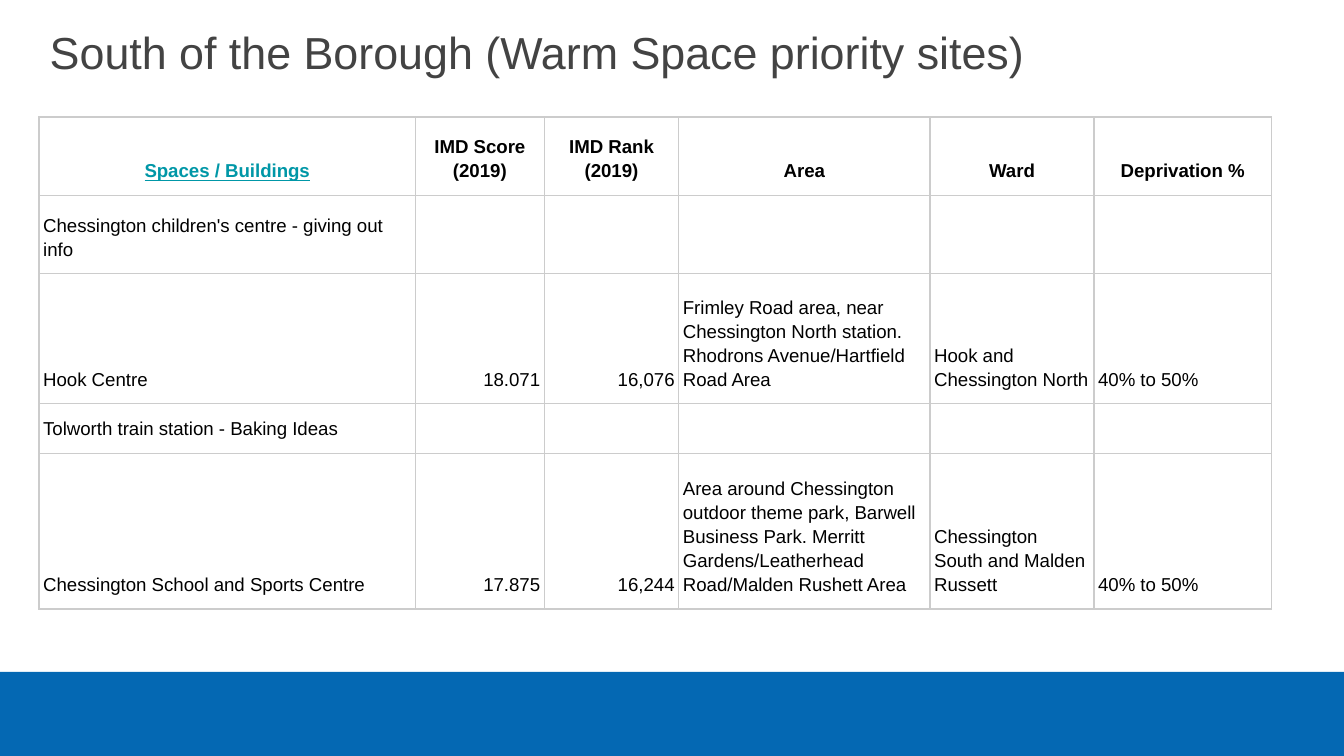
from typing import NamedTuple

from lxml import etree
from pptx import Presentation
from pptx.dml.color import RGBColor
from pptx.enum.shapes import MSO_SHAPE
from pptx.enum.text import MSO_ANCHOR, PP_ALIGN
from pptx.oxml.ns import qn
from pptx.util import Inches, Pt

LEFT, MID, RIGHT = PP_ALIGN.LEFT, PP_ALIGN.CENTER, PP_ALIGN.RIGHT
MIDDLE, BOTTOM = MSO_ANCHOR.MIDDLE, MSO_ANCHOR.BOTTOM
RECT = MSO_SHAPE.RECTANGLE

WIDE = 10
HIGH = WIDE * 9 / 16
EDGE = 0.29
BAND = HIGH / 9
FRAME = 3.28
FONT = "Arial"
BLUE, TEAL, GREY, BLACK, RULE = "0468B3", "0097A7", "434343", "000000", "CCCCCC"
COLS = [2.8, 0.96, 1, 1.87, 1.22, 1.32]
# Least heights: each row grows to fit its text.
ROWS = [0.42, 0, 0.31, 0, 0.44]
ALIGN = [LEFT, RIGHT, RIGHT, LEFT, LEFT, LEFT]


class Style(NamedTuple):
    size: int
    color: str = BLACK
    bold: bool = False
    line: bool = False


class Site(NamedTuple):
    name: str
    score: str = ""
    rank: str = ""
    area: str = ""
    ward: str = ""
    share: str = ""


HEAD = Site("Spaces / Buildings", "IMD Score (2019)", "IMD Rank (2019)",
            "Area", "Ward", "Deprivation %")
SITES = [
    Site("Chessington children's centre - giving out info"),
    Site("Hook Centre", "18.071", "16,076",
         "Frimley Road area, near Chessington North station. "
         "Rhodrons Avenue/Hartfield Road Area",
         "Hook and Chessington North", "40% to 50%"),
    Site("Tolworth train station - Baking Ideas"),
    Site("Chessington School and Sports Centre", "17.875", "16,244",
         "Area around Chessington outdoor theme park, Barwell Business Park. "
         "Merritt Gardens/Leatherhead Road/Malden Rushett Area",
         "Chessington South and Malden Russett", "40% to 50%"),
]
TITLE = Style(24, GREY)
BODY = Style(10)
TOP = Style(10, bold=True)
LINK = Style(10, TEAL, True, True)


def paint(color: str) -> RGBColor:
    return RGBColor.from_string(color)


def write(para, text: str, style: Style, align=LEFT, space: float = 1.15) -> None:
    para.alignment = align
    para.line_spacing = space
    run = para.add_run()
    run.text = text
    font = run.font
    font.name, font.size = FONT, Pt(style.size)
    font.bold, font.underline = style.bold, style.line
    font.color.rgb = paint(style.color)


def border(cell) -> None:
    """Rule all four sides; must come before the cell's fill in the XML."""
    props = cell._tc.get_or_add_tcPr()
    for side in ("a:lnL", "a:lnR", "a:lnT", "a:lnB"):
        line = etree.SubElement(props, qn(side), w=str(Pt(0.75)))
        fill = etree.SubElement(line, qn("a:solidFill"))
        etree.SubElement(fill, qn("a:srgbClr"), val=RULE)


def fill_cell(cell, text: str, style: Style, align, space: float) -> None:
    border(cell)
    cell.fill.background()
    cell.vertical_anchor = BOTTOM
    cell.margin_left = cell.margin_right = Pt(2.25)
    cell.margin_top = cell.margin_bottom = Inches(0.1)
    para = cell.text_frame.paragraphs[0]
    if text:
        write(para, text, style, align, space)
    else:
        # An empty cell needs a small end mark, or its row grows.
        etree.SubElement(para._p, qn("a:endParaRPr"), sz=str(style.size * 100))


def draw_band(slide) -> None:
    band = slide.shapes.add_shape(RECT, 0, Inches(HIGH - BAND),
                                  Inches(WIDE), Inches(BAND))
    band.shadow.inherit = False
    band.fill.solid()
    band.fill.fore_color.rgb = paint(BLUE)
    band.line.fill.background()


def draw_title(slide, text: str) -> None:
    box = slide.shapes.add_textbox(Inches(EDGE), Inches(0.04),
                                   Inches(9.32), Inches(0.62))
    frame = box.text_frame
    frame.word_wrap = True
    frame.vertical_anchor = MIDDLE
    frame.margin_left = frame.margin_right = Inches(0.08)
    frame.margin_top = frame.margin_bottom = Inches(0.08)
    write(frame.paragraphs[0], text, TITLE)


def draw_table(slide) -> None:
    frame = slide.shapes.add_table(
        len(ROWS), len(COLS), Inches(EDGE), Inches(0.87),
        Inches(FRAME), Inches(FRAME))
    table = frame.table
    table.horz_banding = False
    table.first_row = False
    for col, width in zip(table.columns, COLS):
        col.width = Inches(width)
    for row, height in zip(table.rows, ROWS):
        row.height = Inches(height)
    frame.width = frame.height = Inches(FRAME)
    for c, text in enumerate(HEAD):
        fill_cell(table.cell(0, c), text, TOP if c else LINK, MID, 1.15)
    for r, site in enumerate(SITES, 1):
        space = 1.0 if r == 3 else 1.15
        for c, text in enumerate(site):
            fill_cell(table.cell(r, c), text, BODY, ALIGN[c], space)


def main() -> None:
    deck = Presentation()
    deck.slide_width, deck.slide_height = Inches(WIDE), Inches(HIGH)
    slide = deck.slides.add_slide(deck.slide_layouts[6])
    draw_band(slide)
    draw_title(slide, "South of the Borough (Warm Space priority sites)")
    draw_table(slide)
    deck.save("out.pptx")


if __name__ == "__main__":
    main()
